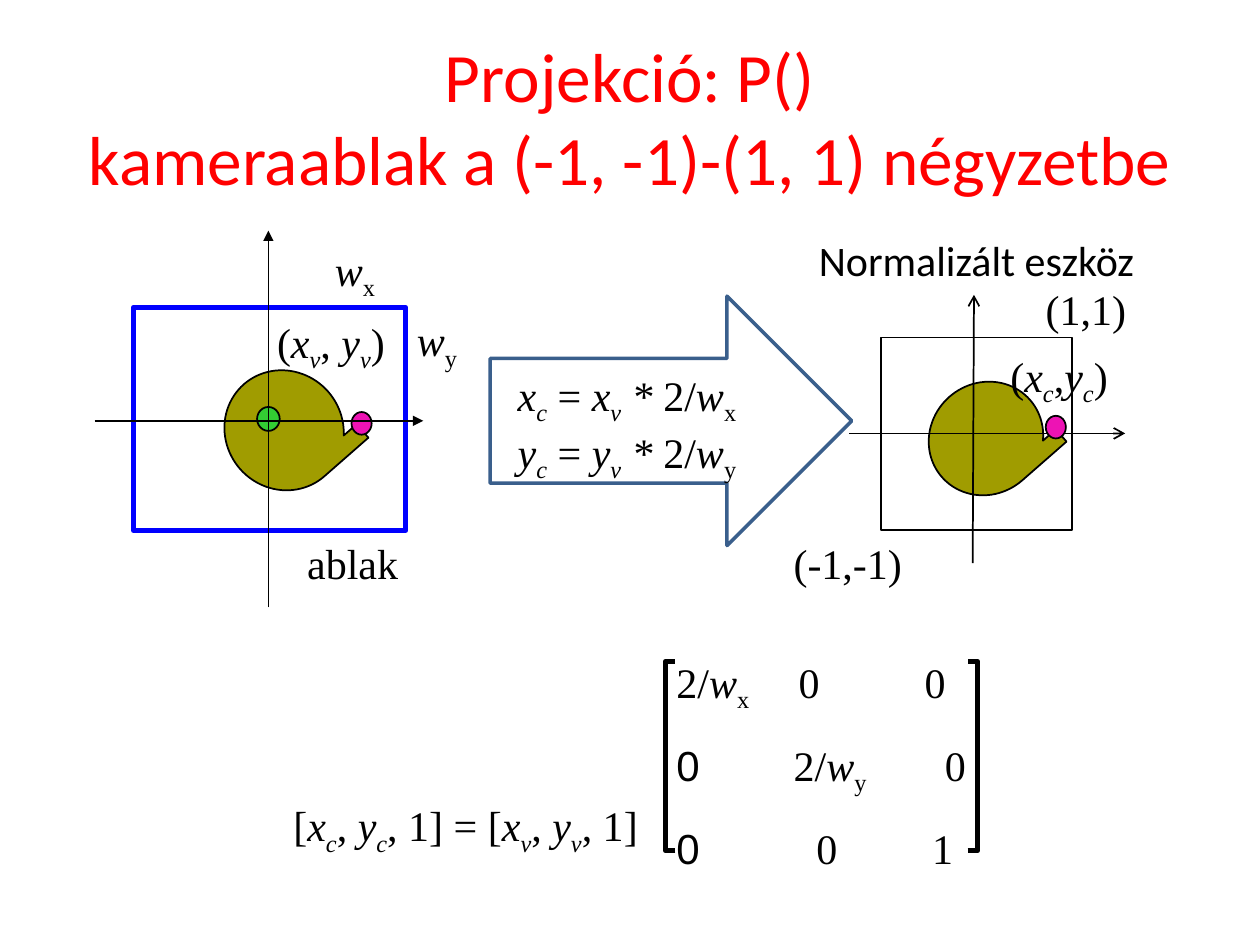
from lxml.etree import SubElement
from pptx import Presentation
from pptx.dml.color import RGBColor
from pptx.enum.shapes import MSO_CONNECTOR, MSO_SHAPE
from pptx.enum.text import MSO_ANCHOR, MSO_AUTO_SIZE, PP_ALIGN
from pptx.oxml.ns import qn
from pptx.util import Inches, Pt

COLORS = {
    "title": "FF0000",
    "ink": "000000",
    "window": "0000FF",
    "tape": "A09C00",
    "point": "ED13B4",
    "eye": "33CC33",
    "arrow": "3A5F8C",
}
SERIF = "Times New Roman"


def color(name):
    """Return the named palette colour."""
    return RGBColor.from_string(COLORS[name])


def variable(name, index, index_style="is"):
    """Return the parts of an italic variable with a subscript."""
    return [(name, "i"), (index, index_style)]


def write_parts(paragraph, parts, font):
    """Write styled parts: i is italic, s subscript, a Arial."""
    for text, style in parts:
        run = paragraph.add_run()
        run.text = text
        run.font.name = "Arial" if "a" in style else font
        run.font.size = Pt(24)
        run.font.italic = "i" in style
        run.font.color.rgb = color("ink")
        if "s" in style:
            run._r.get_or_add_rPr().set("baseline", "-25000")


def add_text(slide, left, top, width, height, lines, wrap=False, font=SERIF):
    """Add a text box with one paragraph for each line of parts."""
    box = slide.shapes.add_textbox(Inches(left), Inches(top), Inches(width), Inches(height))
    frame = box.text_frame
    frame.word_wrap = wrap
    frame.auto_size = MSO_AUTO_SIZE.SHAPE_TO_FIT_TEXT
    for number, parts in enumerate(lines):
        paragraph = frame.add_paragraph() if number else frame.paragraphs[0]
        write_parts(paragraph, parts, font)
    return frame


def add_figure(slide, kind, left, top, width, height, fill=None, line="ink", weight=1):
    """Add a preset shape with a flat fill and an outline."""
    shape = slide.shapes.add_shape(kind, Inches(left), Inches(top), Inches(width), Inches(height))
    shape.shadow.inherit = False
    if fill:
        shape.fill.solid()
        shape.fill.fore_color.rgb = color(fill)
    else:
        shape.fill.background()
    shape.line.color.rgb = color(line)
    shape.line.width = Pt(weight)
    return shape


def add_axis(slide, start, end, head):
    """Add a thin axis with an arrowhead at its end."""
    axis = slide.shapes.add_connector(
        MSO_CONNECTOR.STRAIGHT, *(Inches(value) for value in (*start, *end))
    )
    axis.line.color.rgb = color("ink")
    axis.line.width = Pt(1)
    SubElement(axis.line._get_or_add_ln(), qn("a:tailEnd"), type=head)
    SubElement(axis._element.spPr, qn("a:effectLst"))


def add_tape(slide, left, top, width, height):
    """Add the turned olive object."""
    tape = add_figure(slide, MSO_SHAPE.FLOWCHART_SEQUENTIAL_ACCESS_STORAGE,
                      left, top, width, height, "tape")
    tape.rotation = 318.8


def add_title(slide, left, top, width, height):
    """Place and format the title placeholder."""
    title = slide.shapes.title
    title.left, title.top = Inches(left), Inches(top)
    title.width, title.height = Inches(width), Inches(height)
    frame = title.text_frame
    frame.text = "Projekció: P()\vkameraablak a (-1, -1)-(1, 1) négyzetbe"
    frame.vertical_anchor = MSO_ANCHOR.MIDDLE
    frame.auto_size = MSO_AUTO_SIZE.NONE
    paragraph = frame.paragraphs[0]
    paragraph.alignment = PP_ALIGN.CENTER
    for run in paragraph.runs:
        run.font.name = "Calibri"
        run.font.size = Pt(39.6)
        run.font.color.rgb = color("title")


def add_camera_window(slide, left, top, width, height):
    """Draw the camera window, its axes and its labels."""
    center_x, center_y = left + 1.38, top + 1.51
    add_tape(slide, left + 1.04, top + 1.1, 0.93, 0.97)
    add_figure(slide, MSO_SHAPE.OVAL, left + 2.04, top + 1.44, 0.16, 0.18, "point")
    point = [("(", ""), *variable("x", "v"), (",", ""), *variable(" y", "v"), (")", "")]
    add_text(slide, left + 1.35, top + 0.63, 1.09, 0.5, [point])
    add_figure(slide, MSO_SHAPE.RECTANGLE, left + 0.31, top + 0.61, 2.16, 1.77,
               line="window", weight=3)
    add_text(slide, left + 1.59, top + 2.39, 0.93, 0.51, [[("ablak", "")]])
    add_figure(slide, MSO_SHAPE.OVAL, center_x - 0.09, center_y - 0.11, 0.18, 0.19, "eye")
    add_text(slide, left + 1.81, top + 0.06, 0.54, 0.5, [variable("w", "x", "s")])
    add_text(slide, left + 2.46, top + 0.62, 0.62, 0.5, [variable("w", "y", "s")])
    add_axis(slide, (center_x, top + height), (center_x, top), "triangle")
    add_axis(slide, (left, center_y), (left + width, center_y), "triangle")


def add_device_square(slide, left, top, width, height):
    """Draw the normalized device square, its axes and its labels."""
    add_tape(slide, left + 0.62, top + 0.7, 0.93, 0.88)
    add_axis(slide, (left + 0.98, top + height), (left + 0.99, top), "arrow")
    add_axis(slide, (left, top + 1.1), (left + width, top + 1.1), "arrow")
    add_figure(slide, MSO_SHAPE.RECTANGLE, left + 0.25, top + 0.34, 1.52, 1.53)
    add_text(slide, left + 1.46, top - 0.14, 0.85, 0.5, [[("(1,1)", "")]])
    add_figure(slide, MSO_SHAPE.OVAL, left + 1.56, top + 0.96, 0.16, 0.18, "point")
    point = [("(", ""), *variable("x", "c"), (",", ""), *variable("y", "c"), (")", "")]
    add_text(slide, left + 1.18, top + 0.39, 1.01, 0.5, [point])
    add_text(slide, left - 0.34, top - 0.53, 2.81, 0.51,
             [[("Normalizált eszköz", "")]], font="Calibri")
    add_text(slide, left - 0.54, top + 1.88, 1.07, 0.51, [[("(-1,-1)", "")]])


def add_mapping_arrow(slide, left, top, width, height):
    """Draw the block arrow with the two scaling formulas."""
    add_figure(slide, MSO_SHAPE.RIGHT_ARROW, left, top, width, height, line="arrow", weight=2)
    formulas = [
        [*variable(name, "c"), (" = ", ""), *variable(name, "v"), (" * ", "i"),
         ("2/", ""), *variable("w", name, "s")]
        for name in "xy"
    ]
    add_text(slide, left + 0.12, top + 0.53, 2.29, 0.91, formulas, wrap=True)


def add_bracket(slide, spine, tip, top, height):
    """Draw one square bracket opening from its spine to its tip."""
    builder = slide.shapes.build_freeform(Inches(tip), Inches(top + height))
    corners = [(spine, top + height), (spine, top), (tip, top)]
    builder.add_line_segments([(Inches(x), Inches(y)) for x, y in corners], close=False)
    bracket = builder.convert_to_shape()
    bracket.shadow.inherit = False
    bracket.fill.background()
    bracket.line.color.rgb = color("ink")
    bracket.line.width = Pt(3)


def add_matrix_equation(slide, left, top, width, height):
    """Write the homogeneous vector equation and its matrix."""
    vectors = []
    for index, opening in (("c", "["), ("v", ", 1] = [")):
        vectors += [(opening, ""), *variable("x", index), (",", ""), *variable(" y", index)]
    add_text(slide, left, top + 1.14, 3.24, 0.5, [vectors + [(", 1]", "")]], wrap=True)

    rows = [
        [("2/", ""), *variable("w", "x", "s"), ("\t0\t0", "")],
        [("0", "a"), ("\t2/", ""), *variable("w", "y", "s"), ("\t0", "")],
        [("0", "a"), ("\t0\t1", "")],
    ]
    tab_stops = [(0.97, 1.97), (0.93, 2.13), (1.11, 2.03)]
    frame = add_text(slide, left + 3.04, top, 2.49, height, rows, wrap=True)
    frame.margin_right = Inches(0)
    for number, (paragraph, stops) in enumerate(zip(frame.paragraphs, tab_stops)):
        paragraph.space_before = Pt(14.6 if number else 0)
        tabs = SubElement(paragraph._p.get_or_add_pPr(), qn("a:tabLst"))
        for stop in stops:
            SubElement(tabs, qn("a:tab"), pos=str(Inches(stop)), algn="l")

    add_bracket(slide, left + 3.05, left + 3.13, top + 0.09, 1.5)
    add_bracket(slide, left + width, left + width - 0.08, top + 0.09, 1.5)


def main():
    """Build the projection slide and save it."""
    presentation = Presentation()
    presentation.slide_width, presentation.slide_height = Inches(10), Inches(7.5)
    slide = presentation.slides.add_slide(presentation.slide_layouts[5])
    add_title(slide, 0.5, 0.3, 9, 1.25)
    add_matrix_equation(slide, 2.23, 5.16, 5.53, 1.72)
    add_camera_window(slide, 0.75, 1.83, 2.61, 2.99)
    add_device_square(slide, 6.74, 2.34, 2.19, 2.13)
    add_mapping_arrow(slide, 3.89, 2.35, 2.87, 1.98)
    presentation.save("out.pptx")


if __name__ == "__main__":
    main()
